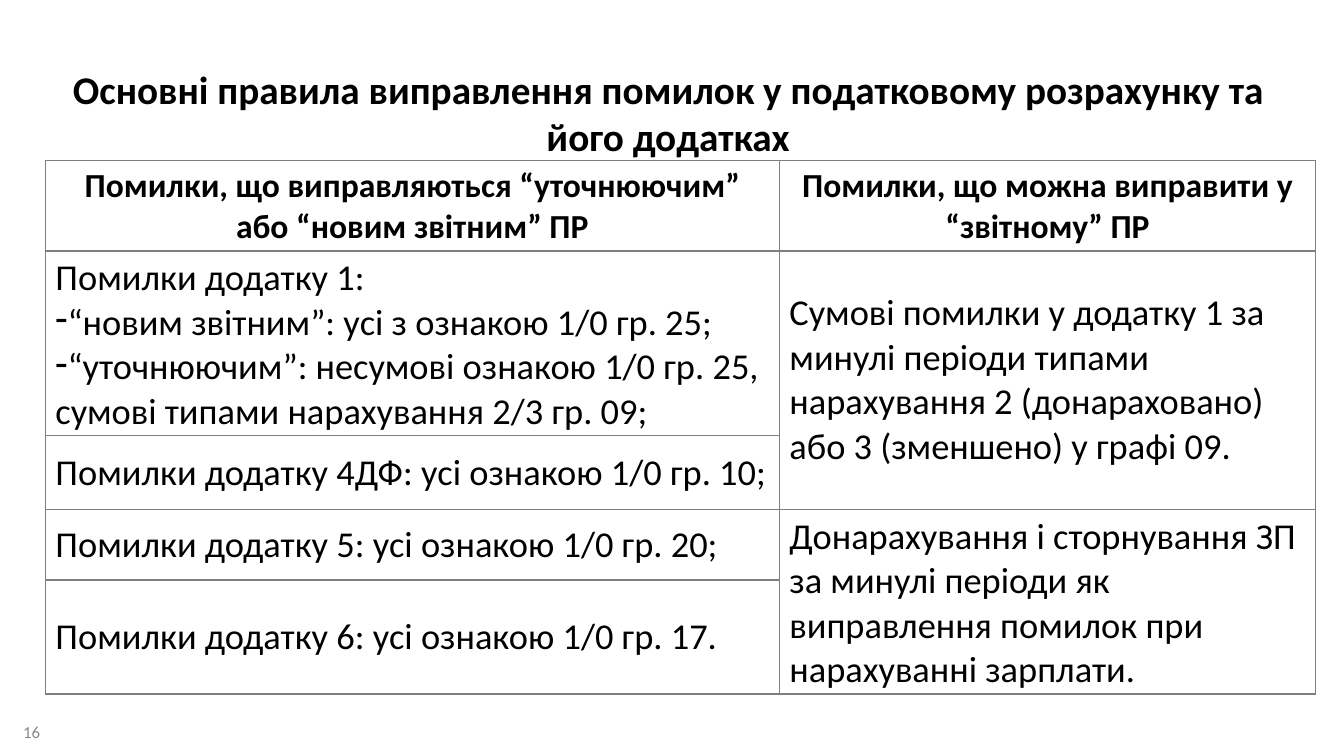
"""Build the slide on correcting errors in a tax calculation and its annexes."""
from dataclasses import dataclass

from lxml import etree
from pptx import Presentation
from pptx.dml.color import RGBColor
from pptx.enum.text import MSO_ANCHOR, PP_ALIGN
from pptx.oxml.ns import qn
from pptx.slide import Slide
from pptx.table import _Cell
from pptx.text.text import _Paragraph
from pptx.util import Inches, Pt

TOP, MIDDLE = MSO_ANCHOR.TOP, MSO_ANCHOR.MIDDLE
LEFT, CENTER = PP_ALIGN.LEFT, PP_ALIGN.CENTER
FONT = "Calibri"
BLACK, GRAY, BORDER = "000000", "898989", "7F7F7F"
COLUMN_WIDTHS = (7.28, 5.32)
ROW_HEIGHTS = (0.9, 1.83, 0.73, 0.7, 1.13)


@dataclass(frozen=True)
class Style:
    size: int
    bold: bool = False
    color: str = BLACK
    align: PP_ALIGN = LEFT


@dataclass(frozen=True)
class Caption:
    text: str
    box: tuple[float, float, float, float]
    anchor: MSO_ANCHOR
    style: Style


@dataclass(frozen=True)
class Rule:
    row: int
    column: int
    text: str
    dashed: tuple[str, ...] = ()
    rows: int = 1


HEADER = Style(24, bold=True, align=CENTER)
BODY = Style(26)

CAPTIONS = (
    Caption("Основні правила виправлення помилок у податковому розрахунку та його додатках",
            (0.52, 0.6, 12.21, 0.71), TOP, Style(28, bold=True, align=CENTER)),
    Caption("16", (0.13, 7.06, 0.55, 0.39), MIDDLE, Style(12, color=GRAY)),
)

RULES = (
    Rule(0, 0, "Помилки, що виправляються “уточнюючим” або “новим звітним” ПР"),
    Rule(0, 1, "Помилки, що можна виправити у “звітному” ПР"),
    Rule(1, 0, "Помилки додатку 1:", dashed=(
        "“новим звітним”: усі з ознакою 1/0 гр. 25;",
        "“уточнюючим”: несумові ознакою 1/0 гр. 25, сумові типами нарахування 2/3 гр. 09;",
    )),
    Rule(1, 1, "Сумові помилки у додатку 1 за минулі періоди типами нарахування "
               "2 (донараховано) або 3 (зменшено) у графі 09.", rows=2),
    Rule(2, 0, "Помилки додатку 4ДФ: усі ознакою 1/0 гр. 10;"),
    Rule(3, 0, "Помилки додатку 5: усі ознакою 1/0 гр. 20;"),
    Rule(3, 1, "Донарахування і сторнування ЗП за минулі періоди як виправлення "
               "помилок при нарахуванні зарплати.", rows=2),
    Rule(4, 0, "Помилки додатку 6: усі ознакою 1/0 гр. 17."),
)


def rgb(color: str) -> RGBColor:
    return RGBColor.from_string(color)


def write(paragraph: _Paragraph, text: str, style: Style) -> None:
    paragraph.text = text
    paragraph.alignment = style.align
    font = paragraph.font
    font.name, font.size, font.bold = FONT, Pt(style.size), style.bold
    font.color.rgb = rgb(style.color)


def add_dash(paragraph: _Paragraph) -> None:
    properties = paragraph._p.get_or_add_pPr()
    properties.set("marL", "0")
    properties.set("indent", "0")
    etree.SubElement(properties, qn("a:buChar"), char="-")


def draw_borders(cell: _Cell) -> None:
    properties = cell._tc.get_or_add_tcPr()
    for side in ("L", "R", "T", "B"):
        line = etree.SubElement(properties, qn(f"a:ln{side}"), w=str(Pt(1)))
        fill = etree.SubElement(line, qn("a:solidFill"))
        etree.SubElement(fill, qn("a:srgbClr"), val=BORDER)


def add_caption(slide: Slide, caption: Caption) -> None:
    frame = slide.shapes.add_textbox(*map(Inches, caption.box)).text_frame
    frame.word_wrap = True
    frame.vertical_anchor = caption.anchor
    write(frame.paragraphs[0], caption.text, caption.style)


def add_rules(slide: Slide) -> None:
    table = slide.shapes.add_table(
        len(ROW_HEIGHTS), len(COLUMN_WIDTHS), Inches(0.45), Inches(1.59),
        Inches(sum(COLUMN_WIDTHS)), Inches(sum(ROW_HEIGHTS))).table
    table.first_row = table.horz_banding = False
    for column, width in zip(table.columns, COLUMN_WIDTHS):
        column.width = Inches(width)
    for row, height in zip(table.rows, ROW_HEIGHTS):
        row.height = Inches(height)
    for cell in table.iter_cells():
        draw_borders(cell)
        cell.fill.background()
        cell.vertical_anchor = MIDDLE
    for rule in RULES:
        cell = table.cell(rule.row, rule.column)
        if rule.rows > 1:
            cell.merge(table.cell(rule.row + rule.rows - 1, rule.column))
        frame = cell.text_frame
        write(frame.paragraphs[0], rule.text, BODY if rule.row else HEADER)
        for text in rule.dashed:
            paragraph = frame.add_paragraph()
            add_dash(paragraph)
            write(paragraph, text, BODY)


def main() -> None:
    presentation = Presentation()
    presentation.slide_width = Inches(13.33)
    presentation.slide_height = Inches(7.5)
    slide = presentation.slides.add_slide(presentation.slide_layouts[6])
    title, page_number = CAPTIONS
    add_caption(slide, title)
    add_rules(slide)
    add_caption(slide, page_number)
    presentation.save("out.pptx")


if __name__ == "__main__":
    main()
